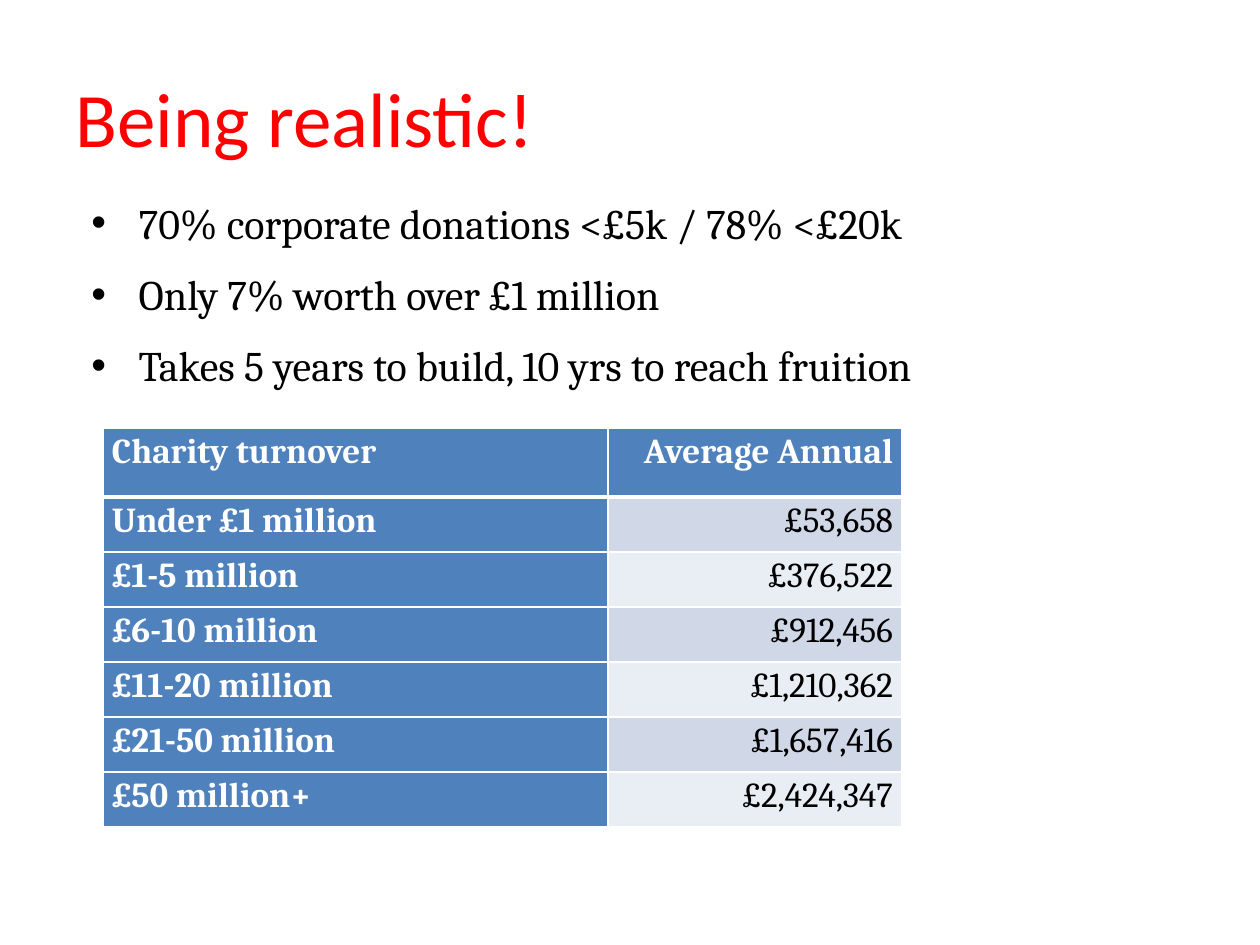
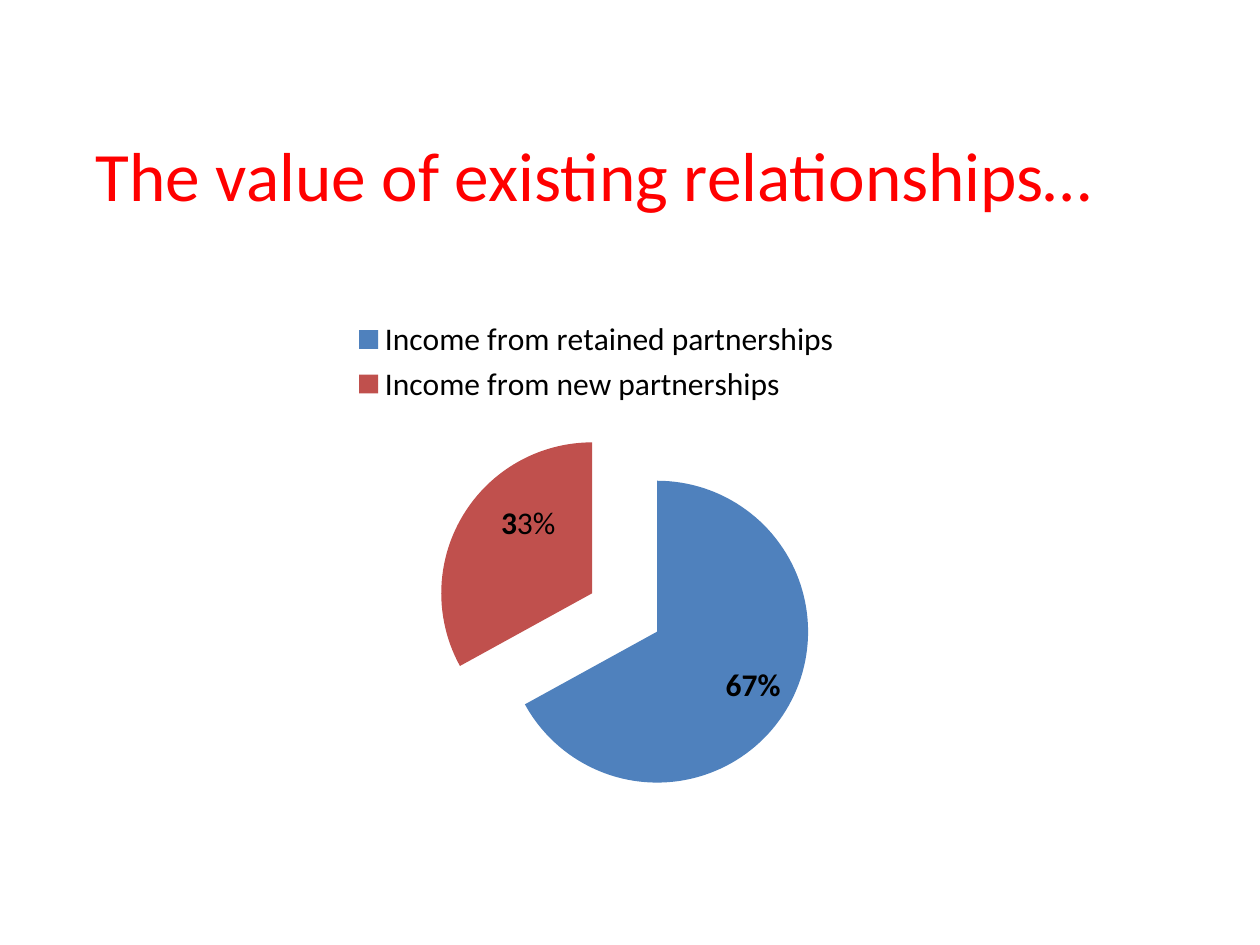
from lxml import etree
from pptx import Presentation
from pptx import util as u
from pptx.chart.data import CategoryChartData
from pptx.dml.color import RGBColor
from pptx.enum import chart as charts, text
from pptx.oxml import parse_xml
from pptx.oxml.ns import nsdecls, qn

PX = 914400 / 126
COLORS = {
    "title": "FF0000",
    "ink": "000000",
    "white": "FFFFFF",
    "blue": "4F81BD",
    "red": "C0504D",
    "dark band": "D0D8E8",
    "light band": "E9EDF4",
}
RGB = {name: RGBColor.from_string(value) for name, value in COLORS.items()}
HEADING_FONT, BODY_FONT = "Calibri", "Cambria"

SLIDES = [
    ("Being realistic!", 44, (63, 38)),
    ("The value of existing relationships…", 39.6, (83, 95)),
]
BULLETS = [
    "70% corporate donations <£5k / 78% <£20k",
    "Only 7% worth over £1 million",
    "Takes 5 years to build, 10 yrs to reach fruition",
]
DONATIONS = [
    ("Charity turnover", "Average Annual"),
    ("Under £1 million", "£53,658"),
    ("£1-5 million", "£376,522"),
    ("£6-10 million", "£912,456"),
    ("£11-20 million", "£1,210,362"),
    ("£21-50 million", "£1,657,416"),
    ("£50 million+", "£2,424,347"),
]
INCOME = {
    "Income from retained partnerships": 67,
    "Income from new partnerships": 33,
}


def px(*lengths):
    return [u.Emu(round(length * PX)) for length in lengths]


def manual_layout(**settings):
    """Return a c:layout element holding the given settings."""
    layout = parse_xml(f"<c:layout {nsdecls('c')}><c:manualLayout/></c:layout>")
    for name, value in settings.items():
        etree.SubElement(layout[0], qn(f"c:{name}")).set("val", str(value))
    return layout


presentation = Presentation()
presentation.slide_width, presentation.slide_height = px(1260, 945)

# Titles
for title_text, size, (left, top) in SLIDES:
    slide = presentation.slides.add_slide(presentation.slide_layouts[5])
    title = slide.shapes.title
    title.left, title.top, title.width, title.height = px(left, top, 1134, 158)
    title.text_frame.text = title_text
    title.text_frame.vertical_anchor = text.MSO_ANCHOR.MIDDLE
    paragraph = title.text_frame.paragraphs[0]
    paragraph.alignment = text.PP_ALIGN.LEFT
    font = paragraph.runs[0].font
    font.name, font.size = HEADING_FONT, u.Pt(size)
    font.color.rgb = RGB["title"]

realistic_slide, relationships_slide = presentation.slides

# Bullets
bullet_box = realistic_slide.shapes.add_textbox(*px(79, 191, 936, 225))
bullet_box.text_frame.word_wrap = True
bullet_box.text_frame.text = "\n".join(BULLETS)
for paragraph in bullet_box.text_frame.paragraphs:
    properties = paragraph._p.get_or_add_pPr()
    properties.set("marL", "342900")
    properties.set("indent", "-342900")
    paragraph.space_after = u.Pt(12)
    etree.SubElement(properties, qn("a:buFont")).set("typeface", "Arial")
    etree.SubElement(properties, qn("a:buChar")).set("char", "•")
    font = paragraph.runs[0].font
    font.name, font.size = BODY_FONT, u.Pt(24)
    font.color.rgb = RGB["ink"]

# Donations table
table = realistic_slide.shapes.add_table(
    len(DONATIONS), 2, *px(103, 428, 799, 399)).table
for column, width in zip(table.columns, px(505, 294)):
    column.width = width
for row_index, values in enumerate(DONATIONS):
    is_header = row_index == 0
    table.rows[row_index].height = px(69 if is_header else 55)[0]
    for column_index, value in enumerate(values):
        is_heading = is_header or column_index == 0
        band = "dark band" if row_index % 2 else "light band"
        cell = table.cell(row_index, column_index)
        cell.margin_left, cell.margin_right = px(9, 9)
        cell.margin_top = cell.margin_bottom = 0
        cell.text_frame.text = value
        paragraph = cell.text_frame.paragraphs[0]
        paragraph.line_spacing = 1.1
        paragraph.alignment = text.PP_ALIGN.RIGHT if column_index else text.PP_ALIGN.LEFT
        font = paragraph.runs[0].font
        font.name, font.size, font.bold = BODY_FONT, u.Pt(20), is_heading
        font.color.rgb = RGB["white" if is_heading else "ink"]
        cell_properties = cell._tc.get_or_add_tcPr()
        for side in "LRTB":
            is_rule = (is_header and side == "B") or (row_index == 1 and side == "T")
            cell_properties.append(parse_xml(
                f'<a:ln{side} {nsdecls("a")} w="{u.Pt(3 if is_rule else 1)}"><a:solidFill>'
                f'<a:srgbClr val="{COLORS["white"]}"/></a:solidFill></a:ln{side}>'))
        cell.fill.solid()
        cell.fill.fore_color.rgb = RGB["blue" if is_heading else band]

# Income pie
chart_data = CategoryChartData()
chart_data.categories = list(INCOME)
chart_data.add_series("Series 1", list(INCOME.values()))
chart = relationships_slide.shapes.add_chart(
    charts.XL_CHART_TYPE.PIE, *px(192, 305, 809, 517), chart_data).chart
chart.has_title = False
chart.font.name, chart.font.size = HEADING_FONT, u.Pt(10)
chart.font.color.rgb = RGB["ink"]
chart.has_legend = True
chart.legend.position = charts.XL_LEGEND_POSITION.TOP
chart.legend.include_in_layout = False
chart.legend.font.name, chart.legend.font.size = HEADING_FONT, u.Pt(18)

pie = chart.plots[0]
pie.vary_by_categories = True
income = pie.series[0]
for point_index, color in enumerate(["blue", "red"]):
    fill = income.points[point_index].format.fill
    fill.solid()
    fill.fore_color.rgb = RGB[color]
first_point = income._element.find(qn("c:dPt"))
first_point.addprevious(parse_xml(f'<c:explosion {nsdecls("c")} val="25"/>'))

labels = income.data_labels
labels.show_percentage, labels.show_value = True, False
labels.number_format, labels.number_format_is_linked = "0%", False
labels.position = charts.XL_LABEL_POSITION.INSIDE_END
labels.font.name, labels.font.size, labels.font.bold = HEADING_FONT, u.Pt(18), True
labels.font.color.rgb = RGB["ink"]

new_label = income.points[1].data_label
label_paragraph = new_label.text_frame.paragraphs[0]
for part, bold in [("3", True), ("3%", False)]:
    run = label_paragraph.add_run()
    run.text = part
    run.font.name, run.font.size, run.font.bold = HEADING_FONT, u.Pt(18), bold
    run.font.color.rgb = RGB["ink"]
new_label.position = charts.XL_LABEL_POSITION.INSIDE_END
label_index = income._element.find(f"{qn('c:dLbls')}/{qn('c:dLbl')}/{qn('c:idx')}")
label_index.addnext(manual_layout(x=0.04, y=-0.03))

plot_area = pie._element.getparent()
for layout in plot_area.findall(qn("c:layout")):
    plot_area.remove(layout)
plot_area.insert(0, manual_layout(
    layoutTarget="inner", xMode="edge", yMode="edge", x=0.3, y=0.23, w=0.47, h=0.73))

presentation.save("out.pptx")
